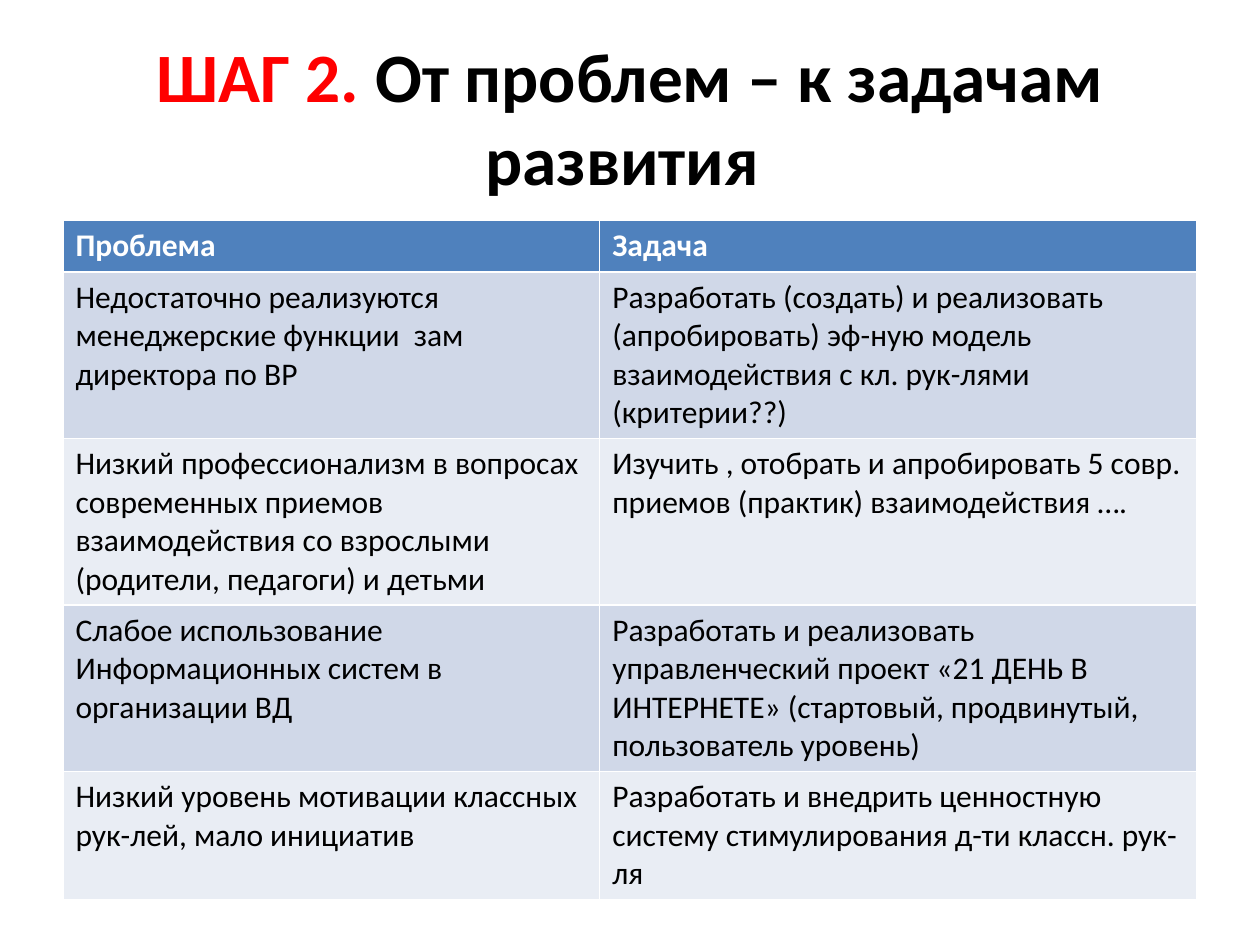
import pptx
import pptx.util
import pptx.dml.color
import pptx.enum.text

Inches, Pt = pptx.util.Inches, pptx.util.Pt

FONT = "Calibri"
COLORS = {
    "accent": "FF0000",
    "text": "000000",
    "white": "FFFFFF",
    "head": "4F81BD",
    "odd": "D0D8E8",
    "even": "E9EDF4",
}
ROWS = [
    ("Проблема", "Задача"),
    ("Недостаточно реализуются менеджерские функции  зам директора по ВР",
     "Разработать (создать) и реализовать (апробировать) эф-ную модель "
     "взаимодействия с кл. рук-лями  (критерии??)"),
    ("Низкий профессионализм в вопросах современных приемов "
     "взаимодействия со взрослыми (родители, педагоги) и детьми",
     "Изучить , отобрать и апробировать 5 совр. приемов (практик) "
     "взаимодействия …."),
    ("Слабое использование Информационных систем в организации ВД",
     "Разработать и реализовать управленческий проект «21 ДЕНЬ В "
     "ИНТЕРНЕТЕ» (стартовый, продвинутый, пользователь уровень)"),
    ("Низкий уровень мотивации классных рук-лей, мало инициатив",
     "Разработать и внедрить ценностную систему стимулирования д-ти "
     "классн. рук-ля"),
]


def color(name):
    return pptx.dml.color.RGBColor.from_string(COLORS[name])


def set_font(font, size, bold):
    font.name, font.size, font.bold = FONT, Pt(size), bold


def add_title(slide, left, top, width, height):
    title = slide.shapes.title
    title.left, title.top = Inches(left), Inches(top)
    title.width, title.height = Inches(width), Inches(height)
    frame = title.text_frame
    frame.word_wrap = True
    frame.auto_size = pptx.enum.text.MSO_AUTO_SIZE.NONE
    frame.vertical_anchor = pptx.enum.text.MSO_ANCHOR.MIDDLE
    para = frame.paragraphs[0]
    para.alignment = pptx.enum.text.PP_ALIGN.CENTER
    set_font(para.font, 39.6, True)
    for text, tone in (("ШАГ 2.", "accent"),
                       (" От проблем – к задачам развития ", "text")):
        run = para.add_run()
        run.text = text
        set_font(run.font, 39.6, True)
        run.font.color.rgb = color(tone)


def fill_cell(cell, text, fill, tone, bold):
    cell.fill.solid()
    cell.fill.fore_color.rgb = color(fill)
    cell.text = text
    font = cell.text_frame.paragraphs[0].font
    set_font(font, 18, bold)
    font.color.rgb = color(tone)


def add_grid(slide, left, top, width, height):
    frame = slide.shapes.add_table(
        len(ROWS), 2, Inches(left), Inches(top), Inches(width), Inches(height))
    table = frame.table
    first = 4.26
    table.columns[0].width = Inches(first)
    table.columns[1].width = Inches(width - first)
    for r, texts in enumerate(ROWS):
        # Rows grow to fit their text
        table.rows[r].height = Inches(0.41)
        head = r == 0
        fill = "head" if head else "odd" if r % 2 else "even"
        for c, text in enumerate(texts):
            fill_cell(table.cell(r, c), text, fill,
                      "white" if head else "text", head)
    frame.height = Inches(height)


def main():
    deck = pptx.Presentation()
    deck.slide_width, deck.slide_height = Inches(10), Inches(7.5)
    slide = deck.slides.add_slide(deck.slide_layouts[5])
    # Heading
    add_title(slide, 0.5, 0.3, 9, 1.25)
    # Problems and tasks
    add_grid(slide, 0.5, 1.75, 9, 5.31)
    deck.save("out.pptx")


if __name__ == "__main__":
    main()
